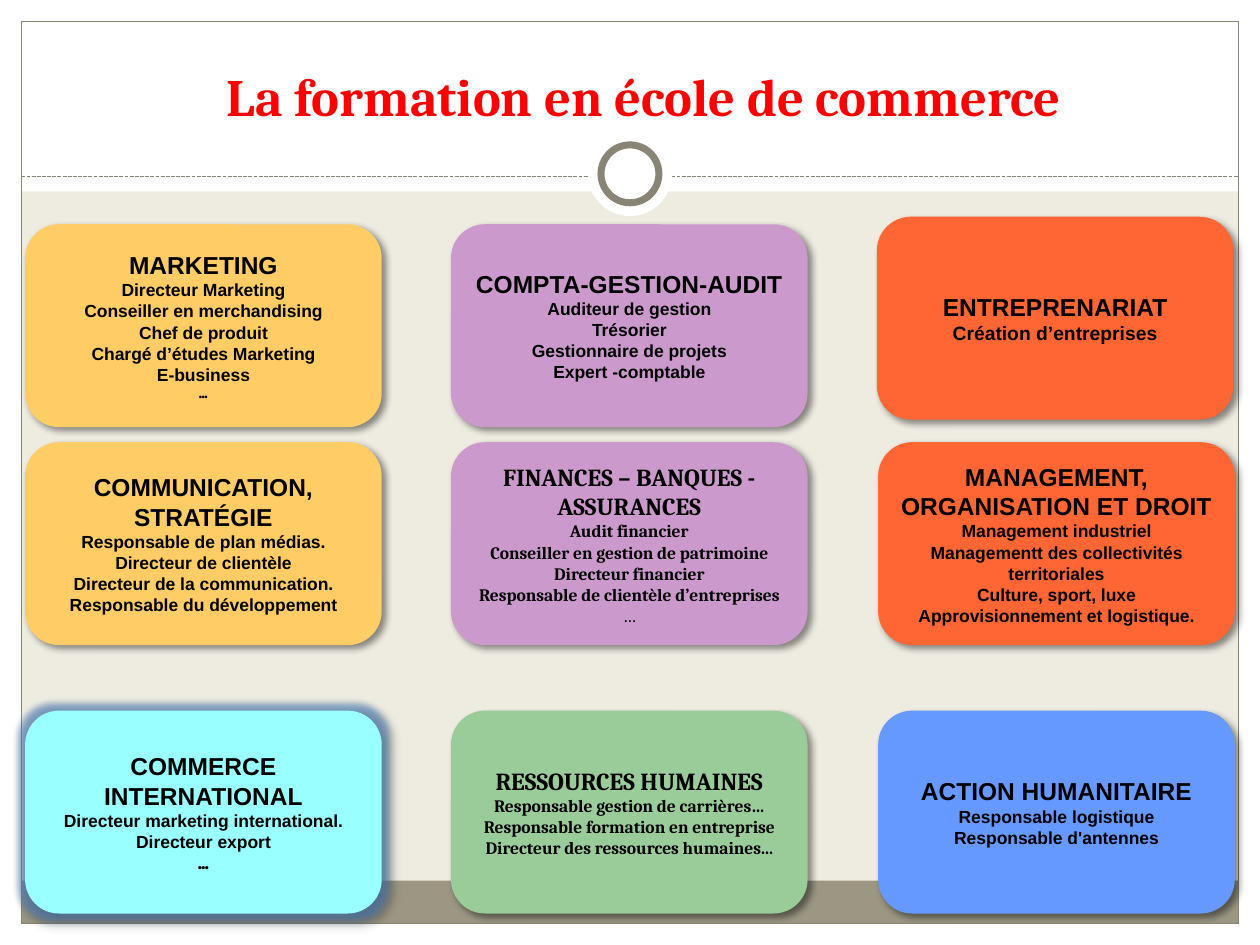
from lxml.etree import SubElement
from pptx import Presentation
from pptx.dml.color import RGBColor
from pptx.enum.dml import MSO_LINE
from pptx.enum.shapes import MSO_CONNECTOR, MSO_SHAPE
from pptx.enum.text import MSO_ANCHOR, PP_ALIGN
from pptx.oxml.ns import qn
from pptx.util import Inches, Pt

WHITE, BEIGE, TAUPE, OLIVE = "FFFFFF", "EEECE1", "9B9783", "898574"
AMBER, MAUVE, ORANGE = "FFCC66", "CC99CC", "FF6633"
CYAN, GREEN, BLUE = "99FFFF", "99CC99", "6699FF"
BLACK, RED, GLOW = "000000", "FF0000", "4F81BD"
SANS, SERIF, MONO = "Arial", "Cambria", "Noto Sans Mono"
CARD_WIDTH, CARD_HEIGHT = 2.83, 1.61
COLUMNS = [0.2, 3.58, 6.97]
ROWS = [1.78, 3.51, 5.64]

CARDS = [
    (COLUMNS[0], ROWS[0], AMBER, SANS, "MARKETING",
     ["Directeur Marketing", "Conseiller en merchandising", "Chef de produit",
      "Chargé d’études Marketing", "E-business", "…"],
     {"last": {"size": Pt(8), "name": MONO}}),
    (COLUMNS[1], ROWS[0], MAUVE, SANS, "COMPTA-GESTION-AUDIT",
     ["Auditeur de gestion", "Trésorier", "Gestionnaire de projets",
      "Expert -comptable"], {}),
    (6.96, 1.72, ORANGE, SANS, "ENTREPRENARIAT",
     ["Création d’entreprises"], {"last": {"size": Pt(11)}}),
    (COLUMNS[0], ROWS[1], AMBER, SANS, "COMMUNICATION, STRATÉGIE",
     ["Responsable de plan médias.", "Directeur de clientèle",
      "Directeur de la communication.", "Responsable du développement"], {}),
    (COLUMNS[1], ROWS[1], MAUVE, SERIF, "FINANCES – BANQUES - ASSURANCES",
     ["Audit financier", "Conseiller en gestion de patrimoine",
      "Directeur financier", "Responsable de clientèle d’entreprises", "…"],
     {"last": {"bold": False}}),
    (COLUMNS[2], ROWS[1], ORANGE, SANS, "MANAGEMENT, ORGANISATION ET DROIT",
     ["Management industriel", "Managementt des collectivités territoriales",
      "Culture, sport, luxe", "Approvisionnement et logistique."], {}),
    (COLUMNS[0], ROWS[2], CYAN, SANS, "COMMERCE INTERNATIONAL",
     ["Directeur marketing international.", "Directeur export", "…"],
     {"last": {"name": MONO}, "glow": True}),
    (COLUMNS[1], ROWS[2], GREEN, SERIF, "RESSOURCES HUMAINES",
     ["Responsable gestion de carrières…", "Responsable formation en entreprise",
      "Directeur des ressources humaines..."], {}),
    (COLUMNS[2], ROWS[2], BLUE, SANS, "ACTION HUMANITAIRE",
     ["Responsable logistique", "Responsable d'antennes"], {}),
]


def color(value):
    return RGBColor.from_string(value)


def apply_format(target, values):
    for name, value in values.items():
        setattr(target, name, value)


def add_box(page, kind, box, fill=None, line=None, weight=0.75):
    shape = page.shapes.add_shape(kind, *map(Inches, box))
    shape.shadow.inherit = False
    if fill:
        shape.fill.solid()
        shape.fill.fore_color.rgb = color(fill)
    else:
        shape.fill.background()
    if line:
        shape.line.color.rgb = color(line)
        shape.line.width = Pt(weight)
    else:
        shape.line.fill.background()
    return shape


def add_effect(effects, tag, tint, alpha, **settings):
    effect = SubElement(effects, qn(tag), settings)
    shade = SubElement(effect, qn("a:srgbClr"), val=tint)
    SubElement(shade, qn("a:alpha"), val=str(alpha * 1000))


def write_lines(frame, lines):
    apply_format(frame, {"word_wrap": True, "vertical_anchor": MSO_ANCHOR.MIDDLE})
    for index, (text, tint, values) in enumerate(lines):
        para = frame.add_paragraph() if index else frame.paragraphs[0]
        para.alignment = PP_ALIGN.CENTER
        span = para.add_run()
        span.text = text
        span.font.color.rgb = color(tint)
        apply_format(span.font, values)


def add_backdrop(page, width, height):
    page.background.fill.solid()
    page.background.fill.fore_color.rgb = color(BEIGE)
    edge = 0.17
    for box in [(0, height - edge, width, edge), (0, 0, width, 1.52),
                (0, 0, edge, height), (width - edge, 0, edge, height)]:
        add_box(page, MSO_SHAPE.RECTANGLE, box, WHITE)
    inner = width - 2 * edge
    add_box(page, MSO_SHAPE.RECTANGLE, (edge, 6.99, inner, 0.34), TAUPE)
    add_box(page, MSO_SHAPE.RECTANGLE,
            (edge, edge, inner, height - 2 * edge), line=OLIVE)
    divider = page.shapes.add_connector(
        MSO_CONNECTOR.STRAIGHT, Inches(edge), Inches(1.4),
        Inches(width - edge), Inches(1.4))
    divider.line.color.rgb = color(OLIVE)
    apply_format(divider.line, {"width": Pt(0.75),
                                "dash_style": MSO_LINE.SQUARE_DOT})
    SubElement(divider._element.spPr, qn("a:effectLst"))
    for size, line in [(0.67, None), (0.46, OLIVE)]:
        box = (width / 2 - size / 2, 1.38 - size / 2, size, size)
        add_box(page, MSO_SHAPE.OVAL, box, WHITE, line, 4)


def add_title(page, box, text):
    title = page.shapes.add_textbox(*map(Inches, box))
    values = {"size": Pt(30), "name": SERIF, "bold": True}
    write_lines(title.text_frame, [(text, RED, values)])


def add_card(page, box, fill, font, heading, jobs, last=None, glow=False):
    card = add_box(page, MSO_SHAPE.ROUNDED_RECTANGLE, box, fill)
    effects = card._element.spPr.find(qn("a:effectLst"))
    if glow:
        add_effect(effects, "a:glow", GLOW, 60, rad=str(Pt(8)))
    add_effect(effects, "a:outerShdw", BLACK, 43, blurRad=str(Pt(4)),
               dist=str(Pt(3)), dir="2700000", algn="tl", rotWithShape="0")
    base = {"size": Pt(10), "name": font, "bold": True}
    lines = [(heading, BLACK, {**base, "size": Pt(14)})]
    lines += [(job, BLACK, base) for job in jobs[:-1]]
    lines.append((jobs[-1], BLACK, {**base, **(last or {})}))
    write_lines(card.text_frame, lines)


def main():
    deck = Presentation()
    apply_format(deck, {"slide_width": Inches(10), "slide_height": Inches(7.5)})
    page = deck.slides.add_slide(deck.slide_layouts[6])
    add_backdrop(page, 10, 7.5)
    add_title(page, (0.43, 0.28, 9.36, 0.95), "La formation en école de commerce")
    for left, top, fill, font, heading, jobs, options in CARDS:
        box = (left, top, CARD_WIDTH, CARD_HEIGHT)
        add_card(page, box, fill, font, heading, jobs, **options)
    deck.save("out.pptx")


if __name__ == "__main__":
    main()
